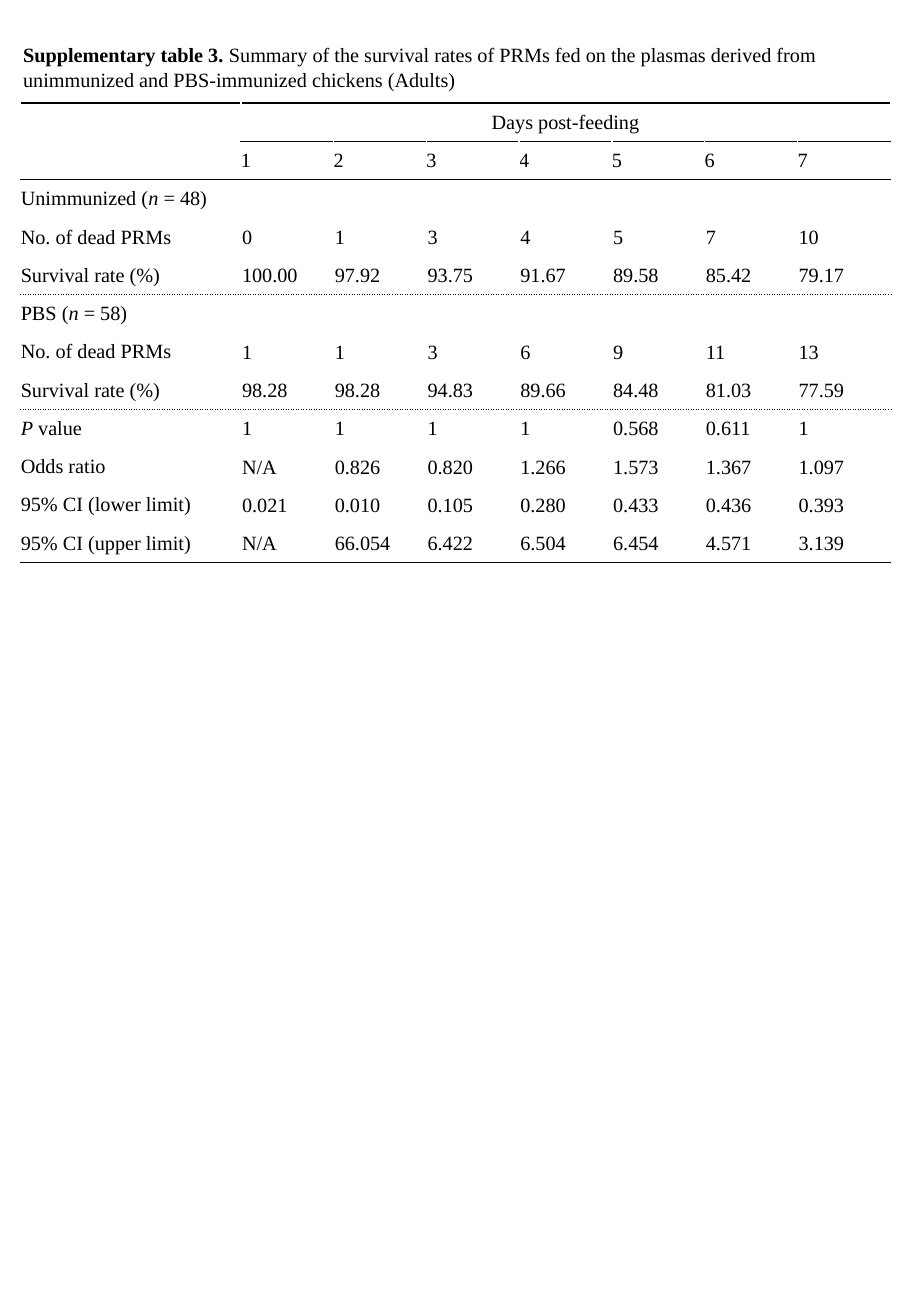
from dataclasses import dataclass

from lxml import etree
from pptx import Presentation
from pptx.dml.color import RGBColor
from pptx.enum.text import MSO_ANCHOR, MSO_AUTO_SIZE, PP_ALIGN
from pptx.oxml.ns import qn
from pptx.util import Pt

MIDDLE, TOP = MSO_ANCHOR.MIDDLE, MSO_ANCHOR.TOP
CENTER, LEFT = PP_ALIGN.CENTER, PP_ALIGN.LEFT
GROW = MSO_AUTO_SIZE.SHAPE_TO_FIT_TEXT

CAPTION = ("Supplementary table 3. ",
           "Summary of the survival rates of PRMs fed on the plasmas derived from "
           "unimmunized and PBS-immunized chickens (Adults)")

# Asterisks enclose italic text.
ROWS = [
    ("", "Days post-feeding"),
    ("", "1", "2", "3", "4", "5", "6", "7"),
    ("Unimmunized (*n *= 48)",),
    ("No. of dead PRMs", "0", "1", "3", "4", "5", "7", "10"),
    ("Survival rate (%)", "100.00", "97.92", "93.75", "91.67", "89.58", "85.42", "79.17"),
    ("PBS (*n *= 58)",),
    ("No. of dead PRMs", "1", "1", "3", "6", "9", "11", "13"),
    ("Survival rate (%)", "98.28", "98.28", "94.83", "89.66", "84.48", "81.03", "77.59"),
    ("*P* value", "1", "1", "1", "1", "0.568", "0.611", "1"),
    ("Odds ratio", "N/A", "0.826", "0.820", "1.266", "1.573", "1.367", "1.097"),
    ("95% CI (lower limit)", "0.021", "0.010", "0.105", "0.280", "0.433", "0.436", "0.393"),
    ("95% CI (upper limit)", "N/A", "66.054", "6.422", "6.504", "6.454", "4.571", "3.139"),
]
DAYS = 7
HEADER_ROWS = 2
GROUP_ROWS = [index for index, row in enumerate(ROWS) if len(row) == 1]


@dataclass(frozen=True)
class Theme:
    font: str = "Times New Roman"
    size: float = 12
    ink: str = "000000"
    heavy: float = 1.25
    thin: float = 0.75


THEME = Theme()

PAGE_WIDTH, PAGE_HEIGHT = 540, 779.76
CAPTION_BOX = (6.5, 21.6, 533.5, 36.3)
TABLE_LEFT, TABLE_TOP = 12.3, 61.2
LABEL_WIDTH, DAY_WIDTH, ROW_HEIGHT = 130.5, 55, 22.68
VALUE_INSET = 0.7

# Each rule: rows above it, first column, width, dash.
RULES = [
    (0, 0, THEME.heavy, "solid"),
    (1, 1, THEME.thin, "solid"),
    (2, 0, THEME.thin, "solid"),
    (5, 0, THEME.thin, "sysDot"),
    (8, 0, THEME.thin, "sysDot"),
    (len(ROWS), 0, THEME.thin, "solid"),
]


def style_paragraph(para, align):
    para.alignment = align
    para.font.name = THEME.font
    para.font.size = Pt(THEME.size)
    para.font.color.rgb = RGBColor.from_string(THEME.ink)


def add_caption(page):
    box = page.shapes.title
    box.left, box.top, box.width, box.height = map(Pt, CAPTION_BOX)
    frame = box.text_frame
    frame.word_wrap = True
    frame.auto_size = GROW
    frame.vertical_anchor = TOP
    para = frame.paragraphs[0]
    style_paragraph(para, LEFT)
    for text, bold in zip(CAPTION, (True, False)):
        span = para.add_run()
        span.text = text
        span.font.bold = bold


def draw_edge(cell, tag, width, dash):
    line = etree.SubElement(cell._tc.get_or_add_tcPr(), qn(tag), w=str(Pt(width)))
    fill = etree.SubElement(line, qn("a:solidFill"))
    etree.SubElement(fill, qn("a:srgbClr"), val=THEME.ink)
    etree.SubElement(line, qn("a:prstDash"), val=dash)


def draw_rules(cell, row, column):
    """Draw a rule on both cells that share it, top edge before bottom edge."""
    for tag, rows_above in (("a:lnT", row), ("a:lnB", row + 1)):
        for position, first_column, width, dash in RULES:
            if position == rows_above and column >= first_column:
                draw_edge(cell, tag, width, dash)


def fill_cell(cell, text, inset, align):
    cell.margin_left = cell.margin_right = cell.margin_top = Pt(inset)
    cell.margin_bottom = Pt(0)
    cell.vertical_anchor = MIDDLE
    para = cell.text_frame.paragraphs[0]
    style_paragraph(para, align)
    for index, part in enumerate(text.split("*")):
        if part:
            span = para.add_run()
            span.text = part
            if index % 2:
                span.font.italic = True


def add_survival_table(page):
    table = page.shapes.add_table(
        len(ROWS), DAYS + 1, Pt(TABLE_LEFT), Pt(TABLE_TOP),
        Pt(LABEL_WIDTH + DAYS * DAY_WIDTH), Pt(len(ROWS) * ROW_HEIGHT)).table
    table.first_row = table.horz_banding = False
    for index, column in enumerate(table.columns):
        column.width = Pt(DAY_WIDTH if index else LABEL_WIDTH)
    for row in table.rows:
        row.height = Pt(ROW_HEIGHT)

    for r, texts in enumerate(ROWS):
        for c in range(DAYS + 1):
            cell = table.cell(r, c)
            inset = VALUE_INSET if c and r >= HEADER_ROWS else 0
            text = texts[c] if c < len(texts) else ""
            fill_cell(cell, text, inset, CENTER if r == 0 else LEFT)
            draw_rules(cell, r, c)
            cell.fill.background()

    table.cell(0, 1).merge(table.cell(0, DAYS))
    for r in GROUP_ROWS:
        table.cell(r, 0).merge(table.cell(r, 1))


def main():
    deck = Presentation()
    deck.slide_width, deck.slide_height = Pt(PAGE_WIDTH), Pt(PAGE_HEIGHT)
    page = deck.slides.add_slide(deck.slide_layouts[5])
    add_caption(page)
    add_survival_table(page)
    deck.save("out.pptx")


if __name__ == "__main__":
    main()
